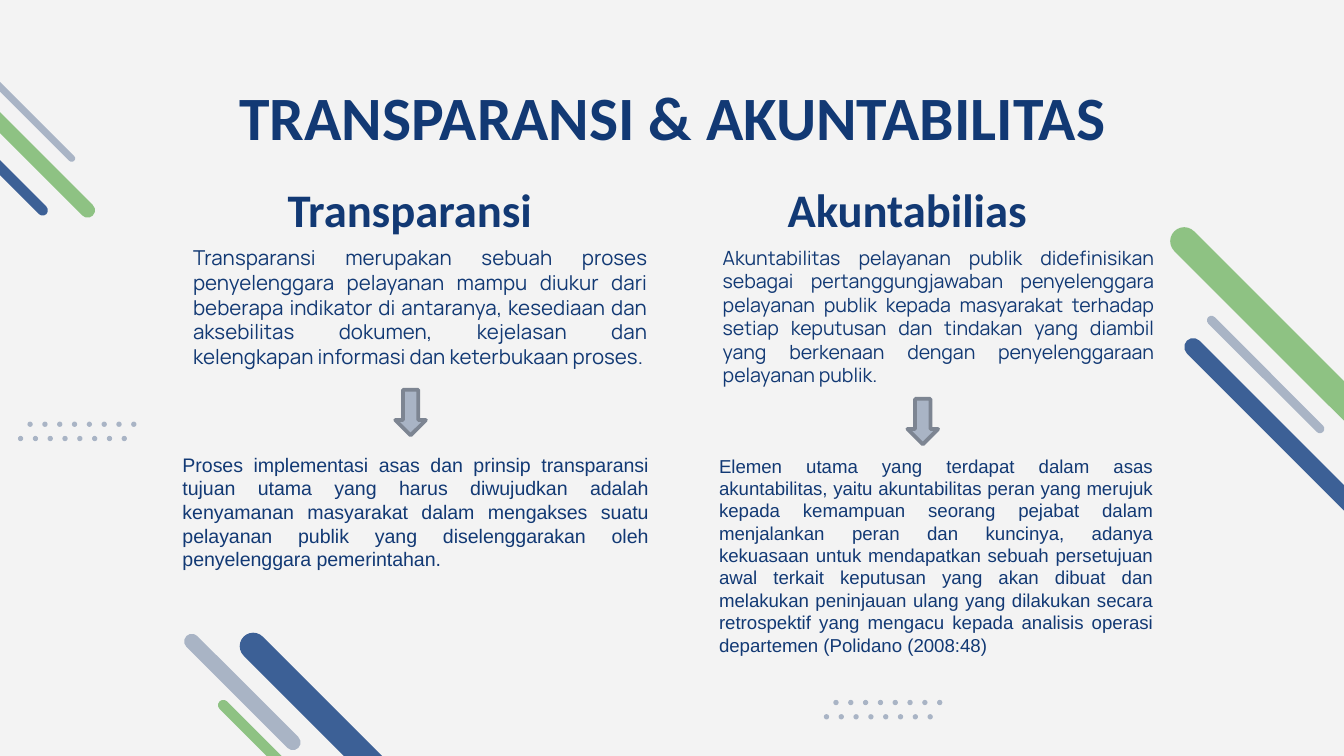
import math
from pptx import Presentation
from pptx.dml.color import RGBColor
from pptx.enum import shapes, text
from pptx.util import Cm, Pt

NAVY, BLUE, GREEN, GREY = "123974", "3C6096", "8EC283", "A9B4C5"
STRIPES = [
    (5.42, 14.53, 2.6, 0.2, GREEN),
    (4.58, 13.08, 2.2, 0.29, GREY),
    (7.12, 14.55, 5.18, 0.51, BLUE),
    (0.56, 2.2, 1.72, 0.13, GREY),
    (-0.42, 2.75, 2.65, 0.2, BLUE),
    (-0.06, 2.26, 3.71, 0.28, GREEN),
    (23.92, 7.08, 2.22, 0.17, GREY),
    (24.79, 8.8, 4.82, 0.34, BLUE),
    (24.27, 6.45, 4.31, 0.53, GREEN),
]
HEADINGS = [("Transparansi", 4.14), ("Akuntabilias", 13.54)]
PARAGRAPHS = [
    ("Transparansi merupakan sebuah proses penyelenggara pelayanan mampu diukur dari "
     "beberapa indikator di antaranya, kesediaan dan aksebilitas dokumen, kejelasan dan "
     "kelengkapan informasi dan keterbukaan proses.",
     (3.4, 4.39, 9.09, 3.63), "Manrope", 11, 0.25),
    ("Akuntabilitas pelayanan publik didefinisikan sebagai pertanggungjawaban "
     "penyelenggara pelayanan publik kepada masyarakat terhadap setiap keputusan dan "
     "tindakan yang diambil yang berkenaan dengan penyelenggaraan pelayanan publik.",
     (13.41, 4.39, 8.66, 2.62), "Manrope", 10.5, 0.25),
    ("Proses implementasi asas dan prinsip transparansi tujuan utama yang harus "
     "diwujudkan adalah kenyamanan masyarakat dalam mengakses suatu pelayanan publik "
     "yang diselenggarakan oleh penyelenggara pemerintahan.",
     (3.2, 8.43, 9.32, 2.49), "Arial", 10.5, 0.13),
    ("Elemen utama yang terdapat dalam asas akuntabilitas, yaitu akuntabilitas peran "
     "yang merujuk kepada kemampuan seorang pejabat dalam menjalankan peran dan "
     "kuncinya, adanya kekuasaan untuk mendapatkan sebuah persetujuan awal terkait "
     "keputusan yang akan dibuat dan melakukan peninjauan ulang yang dilakukan secara "
     "retrospektif yang mengacu kepada analisis operasi departemen (Polidano (2008:48)",
     (13.34, 8.46, 8.69, 4.11), "Arial", 10, 0.13),
]


def color(value):
    return RGBColor.from_string(value)


def add_shape(s, kind, x, y, w, h, fill, line=None):
    sp = s.shapes.add_shape(kind, Cm(x), Cm(y), Cm(w), Cm(h))
    sp.shadow.inherit = False
    sp.fill.solid()
    sp.fill.fore_color.rgb = color(fill)
    if line:
        sp.line.color.rgb = color(line)
        sp.line.width = Pt(2)
    else:
        sp.line.fill.background()
    return sp


def add_stripe(s, cx, cy, extent, thickness, fill):
    length = (extent - thickness) * math.sqrt(2) + thickness
    sp = add_shape(s, shapes.MSO_SHAPE.ROUNDED_RECTANGLE, cx - length / 2,
                   cy - thickness / 2, length, thickness, fill)
    sp.adjustments[0] = 0.5
    sp.rotation = 45


def add_dots(s, x, y):
    for row in range(2):
        for col in range(8):
            add_shape(s, shapes.MSO_SHAPE.OVAL, x + 0.28 * col - 0.18 * row,
                      y + 0.27 * row, 0.1, 0.1, GREY)


def set_text(sp, words, font, size, align, anchor, inset, bold=False):
    tf = sp.text_frame
    tf.word_wrap = True
    tf.auto_size = text.MSO_AUTO_SIZE.NONE
    tf.vertical_anchor = anchor
    tf.margin_left = tf.margin_right = Cm(0.25)
    tf.margin_top = tf.margin_bottom = Cm(inset)
    p = tf.paragraphs[0]
    p.text = words
    p.alignment = align
    p.font.name = font
    p.font.size = Pt(size)
    p.font.bold = bold
    p.font.color.rgb = color(NAVY)
    return p


def set_title(s, words):
    sp = s.shapes.title
    sp.left, sp.top, sp.width, sp.height = Cm(2.01), Cm(1.24), Cm(21.41), Cm(1.6)
    set_text(sp, words, "Calibri", 33, text.PP_ALIGN.CENTER, text.MSO_ANCHOR.TOP, 0.25, True)


def add_heading(s, words, x):
    sp = s.shapes.add_textbox(Cm(x), Cm(3.12), Cm(7.21), Cm(1.6))
    set_text(sp, words, "Calibri", 25, text.PP_ALIGN.CENTER, text.MSO_ANCHOR.BOTTOM, 0.25, True)


def add_paragraph(s, words, box, font, size, inset):
    sp = s.shapes.add_textbox(*map(Cm, box))
    p = set_text(sp, words, font, size, text.PP_ALIGN.JUSTIFY, text.MSO_ANCHOR.TOP, inset)
    p.line_spacing = Pt(size * 1.2)


def add_arrow(s, x, y):
    add_shape(s, shapes.MSO_SHAPE.DOWN_ARROW, x, y, 0.58, 0.86, GREY, "7D8592")


def main():
    prs = Presentation()
    prs.slide_width, prs.slide_height = Cm(25.4), Cm(14.29)
    s = prs.slides.add_slide(prs.slide_layouts[5])
    s.background.fill.solid()
    s.background.fill.fore_color.rgb = color("F3F3F3")
    for stripe in STRIPES:
        add_stripe(s, *stripe)
    add_dots(s, 15.75, 13.23)
    add_dots(s, 0.52, 7.97)
    set_title(s, "TRANSPARANSI & AKUNTABILITAS")
    for heading in HEADINGS:
        add_heading(s, *heading)
    for paragraph in PARAGRAPHS:
        add_paragraph(s, *paragraph)
    add_arrow(s, 7.47, 7.37)
    add_arrow(s, 17.15, 7.54)
    prs.save("out.pptx")


if __name__ == "__main__":
    main()
